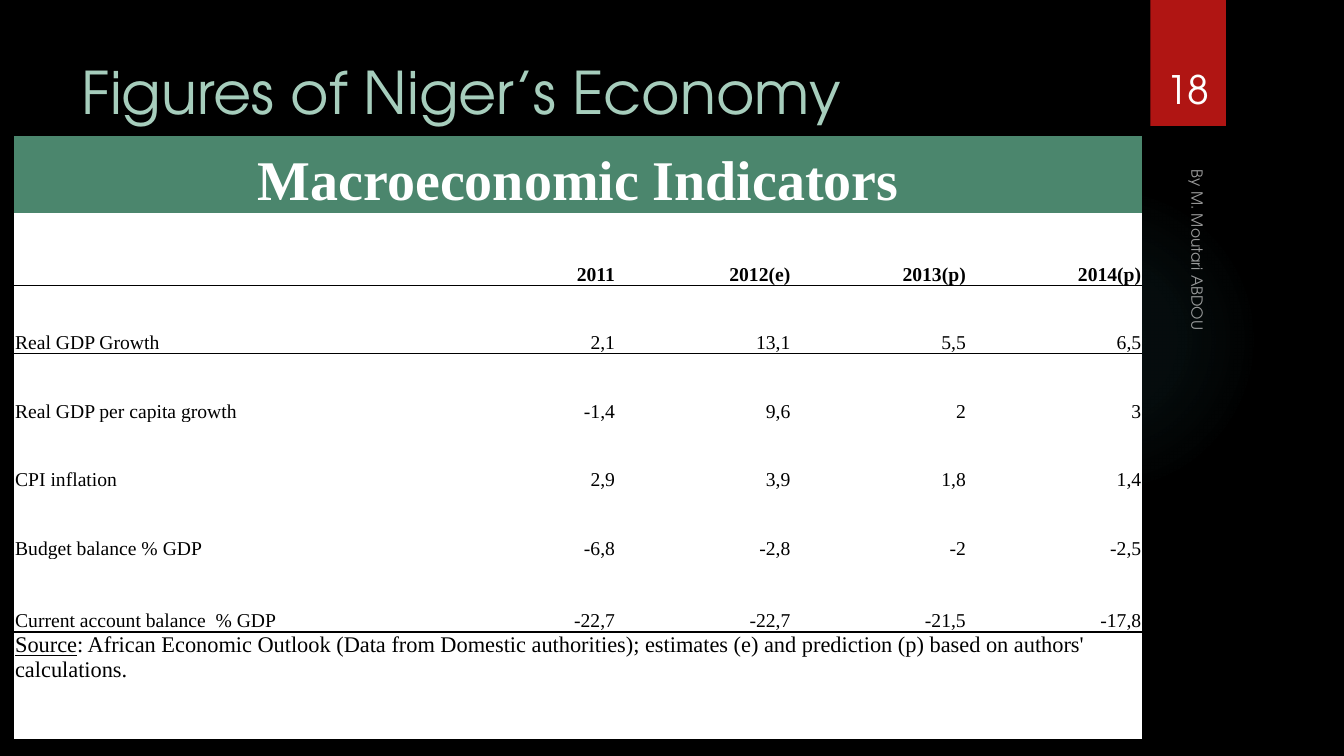
from lxml import etree
from pptx import Presentation
from pptx import util as u
from pptx.dml.color import RGBColor
from pptx.enum import shapes, text
from pptx.oxml import parse_xml
from pptx.oxml.ns import qn

COLORS = {"black": "000000", "white": "FFFFFF", "mint": "A6CDBC",
          "green": "4B866D", "red": "B01513", "glow": "50B9C1"}
HEAD_FONT, TABLE_FONT = "TeX Gyre Adventor", "Times New Roman"
NS = 'xmlns:a="http://schemas.openxmlformats.org/drawingml/2006/main"'


def color(name):
    return RGBColor.from_string(COLORS[name])


def style(paragraph, size, font, tint, align=text.PP_ALIGN.LEFT, bold=False):
    paragraph.alignment = align
    for run in paragraph.runs:
        run.font.size = u.Pt(size)
        run.font.name = font
        run.font.bold = bold
        run.font.color.rgb = color(tint)


prs = Presentation()
prs.slide_width, prs.slide_height = u.Inches(13.33), u.Inches(7.5)
slide = prs.slides.add_slide(prs.slide_layouts[5])
slide.background.fill.solid()
slide.background.fill.fore_color.rgb = color("black")

# Soft glow behind the table edge
glow = slide.shapes.add_shape(shapes.MSO_SHAPE.OVAL, u.Inches(9.41), u.Inches(1.83),
                              u.Inches(3.08), u.Inches(3.08))
glow.shadow.inherit = False
glow.line.fill.background()
stops = "".join(
    f'<a:gs pos="{pos}000"><a:srgbClr val="{COLORS["glow"]}"><a:alpha val="{alpha}000"/>'
    '</a:srgbClr></a:gs>' for pos, alpha in ((0, 7), (36, 6), (69, 0)))
glow_fill = parse_xml(
    f'<a:gradFill {NS}><a:gsLst>{stops}</a:gsLst><a:path path="circle">'
    '<a:fillToRect l="50000" t="50000" r="50000" b="50000"/></a:path></a:gradFill>')
glow._element.spPr.find(qn("a:prstGeom")).addnext(glow_fill)

# Red page-number tab with a soft shadow
tab = slide.shapes.add_shape(shapes.MSO_SHAPE.RECTANGLE, u.Inches(11.41), 0,
                             u.Inches(0.75), u.Inches(1.25))
tab.shadow.inherit = False
tab.fill.solid()
tab.fill.fore_color.rgb = color("red")
tab.line.fill.background()
tab._element.spPr.find(qn("a:effectLst")).append(parse_xml(
    f'<a:outerShdw {NS} blurRad="38100" dist="25400" dir="5400000" rotWithShape="0">'
    f'<a:srgbClr val="{COLORS["black"]}"><a:alpha val="45000"/></a:srgbClr></a:outerShdw>'))

# Title, brought in front of the decoration
title = slide.shapes.title
slide.shapes._spTree.append(title._element)
title.left, title.top = u.Inches(0.71), u.Inches(0.5)
title.width, title.height = u.Inches(10.29), u.Inches(1.53)
title.text_frame.text = "Figures of Niger’s Economy"
title.text_frame.auto_size = text.MSO_AUTO_SIZE.NONE
title.text_frame.vertical_anchor = text.MSO_ANCHOR.TOP
style(title.text_frame.paragraphs[0], 42, HEAD_FONT, "mint")

# Indicator table
SOURCE = ("Source", ": African Economic Outlook (Data from Domestic authorities); estimates (e) "
          "and prediction (p) based on authors' calculations.")
ROWS = [
    ["Macroeconomic Indicators"],
    ["", "2011", "2012(e)", "2013(p)", "2014(p)"],
    ["Real GDP Growth", "2,1", "13,1", "5,5", "6,5"],
    ["Real GDP per capita growth", "-1,4", "9,6", "2", "3"],
    ["CPI inflation", "2,9", "3,9", "1,8", "1,4"],
    ["Budget balance % GDP", "-6,8", "-2,8", "-2", "-2,5"],
    ["Current account balance  % GDP", "-22,7", "-22,7", "-21,5", "-17,8"],
    [""],
]
HEIGHTS = [0.76, 0.72, 0.68, 0.68, 0.68, 0.68, 0.72, 1.06]
WIDTHS = [5.02, 0.95, 1.74, 1.74, 1.74]
RULES = {1: "lnB", 2: "lnT", 6: "lnB", 7: "lnT"}
last = len(ROWS) - 1

frame = slide.shapes.add_table(len(ROWS), len(WIDTHS), u.Inches(0.14), u.Inches(1.35),
                               u.Inches(11.18), u.Inches(5.95))
indicators = frame.table
indicators.first_row = indicators.horz_banding = False
indicators._tbl.tblPr.find(qn("a:tableStyleId")).text = "{2D5ABB26-0587-4C30-8999-92F81FD0307C}"
for column, width in zip(indicators.columns, WIDTHS):
    column.width = u.Inches(width)
for row, height in zip(indicators.rows, HEIGHTS):
    row.height = u.Inches(height)
for r in (0, last):
    indicators.cell(r, 0).merge(indicators.cell(r, len(WIDTHS) - 1))

for r in range(len(ROWS)):
    for c in range(len(WIDTHS)):
        cell = indicators.cell(r, c)
        cell.fill.solid()
        cell.fill.fore_color.rgb = color("green" if r == 0 else "white")
        cell.margin_left = cell.margin_right = cell.margin_top = u.Inches(0.01)
        cell.margin_bottom = 0
        cell.vertical_anchor = text.MSO_ANCHOR.TOP if r == last else text.MSO_ANCHOR.BOTTOM
        if r in RULES:
            cell._tc.get_or_add_tcPr().insert(0, parse_xml(
                f'<a:{RULES[r]} {NS} w="12700"><a:solidFill><a:srgbClr val="{COLORS["black"]}"/>'
                f'</a:solidFill></a:{RULES[r]}>'))
        if c < len(ROWS[r]) and ROWS[r][c]:
            cell.text_frame.text = ROWS[r][c]
            if r == 0:
                style(cell.text_frame.paragraphs[0], 40, TABLE_FONT, "white",
                      text.PP_ALIGN.CENTER, True)
            else:
                side = text.PP_ALIGN.RIGHT if c else text.PP_ALIGN.LEFT
                style(cell.text_frame.paragraphs[0], 14, TABLE_FONT, "black", side, r == 1)

# Source note in the last row
note = indicators.cell(last, 0).text_frame.paragraphs[0]
for part in SOURCE:
    note.add_run().text = part
style(note, 16, TABLE_FONT, "black")
note.runs[0].font.underline = True

# Author line, turned to read downwards
author = slide.shapes.add_textbox(u.Inches(9.79), u.Inches(3.53), u.Inches(4.22), u.Inches(0.33))
author.rotation = 90
author.text_frame.word_wrap = True
author.text_frame.vertical_anchor = text.MSO_ANCHOR.BOTTOM
author.text_frame.text = "By M. Moutari ABDOU"
style(author.text_frame.paragraphs[0], 11, HEAD_FONT, "white")
for tint in author._element.iter(qn("a:srgbClr")):
    etree.SubElement(tint, qn("a:alpha")).set("val", "60000")

# Page number
number = slide.shapes.add_textbox(u.Inches(11.32), u.Inches(0.32), u.Inches(0.92), u.Inches(0.84))
number.text_frame.word_wrap = True
number.text_frame.vertical_anchor = text.MSO_ANCHOR.BOTTOM
number.text_frame.text = "18"
style(number.text_frame.paragraphs[0], 28, HEAD_FONT, "white", text.PP_ALIGN.CENTER)

prs.save("out.pptx")
